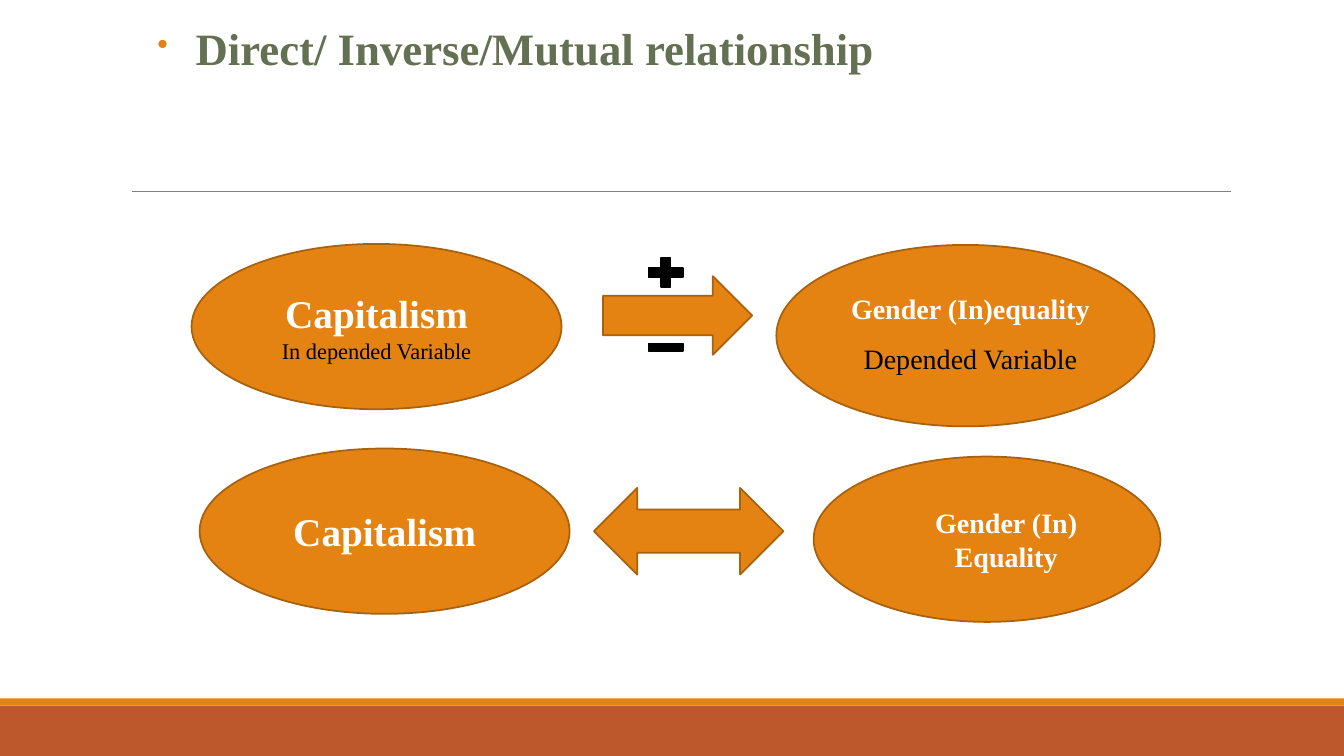
from collections import namedtuple
from dataclasses import dataclass

from lxml import etree
from pptx import Presentation
from pptx.dml.color import RGBColor
from pptx.enum.shapes import MSO_CONNECTOR, MSO_SHAPE
from pptx.enum.text import MSO_ANCHOR, MSO_AUTO_SIZE, PP_ALIGN
from pptx.oxml.ns import qn
from pptx.util import Inches, Pt

RECTANGLE, OVAL = MSO_SHAPE.RECTANGLE, MSO_SHAPE.OVAL
RIGHT_ARROW, DOUBLE_ARROW = MSO_SHAPE.RIGHT_ARROW, MSO_SHAPE.LEFT_RIGHT_ARROW
PLUS, MINUS = MSO_SHAPE.MATH_PLUS, MSO_SHAPE.MATH_MINUS
STRAIGHT = MSO_CONNECTOR.STRAIGHT
TOP, MIDDLE = MSO_ANCHOR.TOP, MSO_ANCHOR.MIDDLE
LEFT, CENTER = PP_ALIGN.LEFT, PP_ALIGN.CENTER
NO_AUTOFIT = MSO_AUTO_SIZE.NONE
TITLE_ONLY = 5

Box = namedtuple("Box", "left top width height")


@dataclass(frozen=True)
class Theme:
    """Colours, type sizes and line widths of the slide."""

    font: str = "Times New Roman"
    orange: str = "E48312"
    outline: str = "A9610D"
    rust: str = "BD582C"
    olive: str = "637052"
    grey: str = "808080"
    black: str = "000000"
    white: str = "FFFFFF"
    title: int = 32
    cause: int = 28
    effect: int = 20
    note: int = 16
    border: float = 1.25
    rule: float = 0.5


THEME = Theme()


def set_all(target, values):
    """Set each attribute named in values."""
    for name, value in values.items():
        setattr(target, name, value)


def inside(box, left, top, width, height):
    """Return a box offset from the corner of another box."""
    return Box(box.left + left, box.top + top, width, height)


def add_block(page, kind, box, fill, outline=None):
    """Add a flat filled shape, with an outline if a colour is given."""
    shape = page.shapes.add_shape(kind, *map(Inches, box))
    shape.shadow.inherit = False
    shape.fill.solid()
    shape.fill.fore_color.rgb = RGBColor.from_string(fill)
    if outline:
        shape.line.color.rgb = RGBColor.from_string(outline)
        shape.line.width = Pt(THEME.border)
    else:
        shape.line.fill.background()
    return shape


def write_span(para, text, size, color, bold):
    """Add one styled span to a paragraph."""
    span = para.add_run()
    span.text = text
    set_all(span.font, {"name": THEME.font, "size": Pt(size), "bold": bold})
    span.font.color.rgb = RGBColor.from_string(color)


def set_indent(para, margin, hanging=0):
    """Set the left margin and the hanging indent of a paragraph."""
    properties = para._p.get_or_add_pPr()
    properties.set("marL", str(Inches(margin)))
    properties.set("indent", str(-Inches(hanging)))
    return properties


def add_title(page, box, text):
    """Place the bulleted title in its placeholder."""
    title = page.shapes.title
    edges = dict(zip(Box._fields, map(Inches, box)))
    set_all(title, edges)
    frame = title.text_frame
    set_all(frame, {"word_wrap": True, "auto_size": NO_AUTOFIT, "vertical_anchor": TOP})
    para = frame.paragraphs[0]
    para.alignment = LEFT
    properties = set_indent(para, 0.38, 0.38)
    color = etree.SubElement(properties, qn("a:buClr"))
    etree.SubElement(color, qn("a:srgbClr"), val=THEME.orange)
    etree.SubElement(properties, qn("a:buSzPct"), val="70000")
    etree.SubElement(properties, qn("a:buChar"), char="•")
    write_span(para, text, THEME.title, THEME.olive, True)


def add_variable(page, box, lines, margin=0, para_format=None, side_inset=0.1):
    """Add an ellipse with centred lines of (text, size, colour, bold)."""
    oval = add_block(page, OVAL, box, THEME.orange, THEME.outline)
    frame = oval.text_frame
    inset = Inches(side_inset)
    set_all(frame, {"word_wrap": True, "vertical_anchor": MIDDLE,
                    "margin_left": inset, "margin_right": inset})
    for number, line in enumerate(lines):
        para = frame.add_paragraph() if number else frame.paragraphs[0]
        set_all(para, {"alignment": CENTER, **(para_format or {})})
        set_indent(para, margin)
        write_span(para, *line)


def add_causal_row(page, box):
    """Show a cause acting on an effect, with plus and minus signs."""
    add_variable(page, inside(box, 0, 0, 3.67, 1.64), [
        ("Capitalism", THEME.cause, THEME.white, True),
        ("In depended Variable", THEME.note, THEME.black, False)])
    spacing = {"line_spacing": 0.9, "space_before": Pt(12), "space_after": Pt(2)}
    add_variable(page, inside(box, 5.8, 0.01, 3.75, 1.8), [
        ("Gender (In)equality", THEME.effect, THEME.white, True),
        ("Depended Variable", THEME.effect, THEME.black, False)],
        margin=0.1, para_format=spacing, side_inset=0)
    add_block(page, RIGHT_ARROW, inside(box, 4.08, 0.32, 1.48, 0.78),
              THEME.orange, THEME.outline)
    for sign, top, height in ((PLUS, 0.09, 0.39), (MINUS, 0.87, 0.31)):
        add_block(page, sign, inside(box, 4.47, top, 0.47, height),
                  THEME.black, THEME.black)


def add_mutual_row(page, box):
    """Show two variables acting on each other."""
    add_variable(page, inside(box, 0, 0, 3.67, 1.64),
                 [("Capitalism", THEME.cause, THEME.white, True)])
    add_variable(page, inside(box, 6.09, 0.08, 3.44, 1.64),
                 [("Gender (In) Equality", THEME.effect, THEME.white, True)],
                 margin=0.38)
    add_block(page, DOUBLE_ARROW, inside(box, 3.91, 0.39, 1.88, 0.86),
              THEME.orange, THEME.outline)


def add_rule(page, box):
    """Draw the thin line under the title."""
    rule = page.shapes.add_connector(
        STRAIGHT, *map(Inches, (box.left, box.top, box.left + box.width, box.top)))
    rule.line.color.rgb = RGBColor.from_string(THEME.grey)
    rule.line.width = Pt(THEME.rule)
    etree.SubElement(rule._element.spPr, qn("a:effectLst"))


def add_footer(page, box):
    """Draw the footer band with its thin stripe on top."""
    stripe = 0.07
    add_block(page, RECTANGLE, inside(box, 0, stripe, box.width, box.height - stripe),
              THEME.rust)
    add_block(page, RECTANGLE, inside(box, 0, 0, box.width, stripe), THEME.orange)


def main():
    """Build the slide and save it."""
    deck = Presentation()
    set_all(deck, {"slide_width": Inches(13.33), "slide_height": Inches(7.5)})
    page = deck.slides.add_slide(deck.slide_layouts[TITLE_ONLY])
    add_footer(page, Box(0, 6.93, 13.33, 0.57))
    add_rule(page, Box(1.31, 1.9, 10.9, 0))
    add_title(page, Box(1.46, 0.16, 9.87, 1), "Direct/ Inverse/Mutual relationship")
    add_causal_row(page, Box(1.9, 2.42, 9.55, 1.81))
    add_mutual_row(page, Box(1.98, 4.45, 9.53, 1.72))
    deck.save("out.pptx")


if __name__ == "__main__":
    main()
